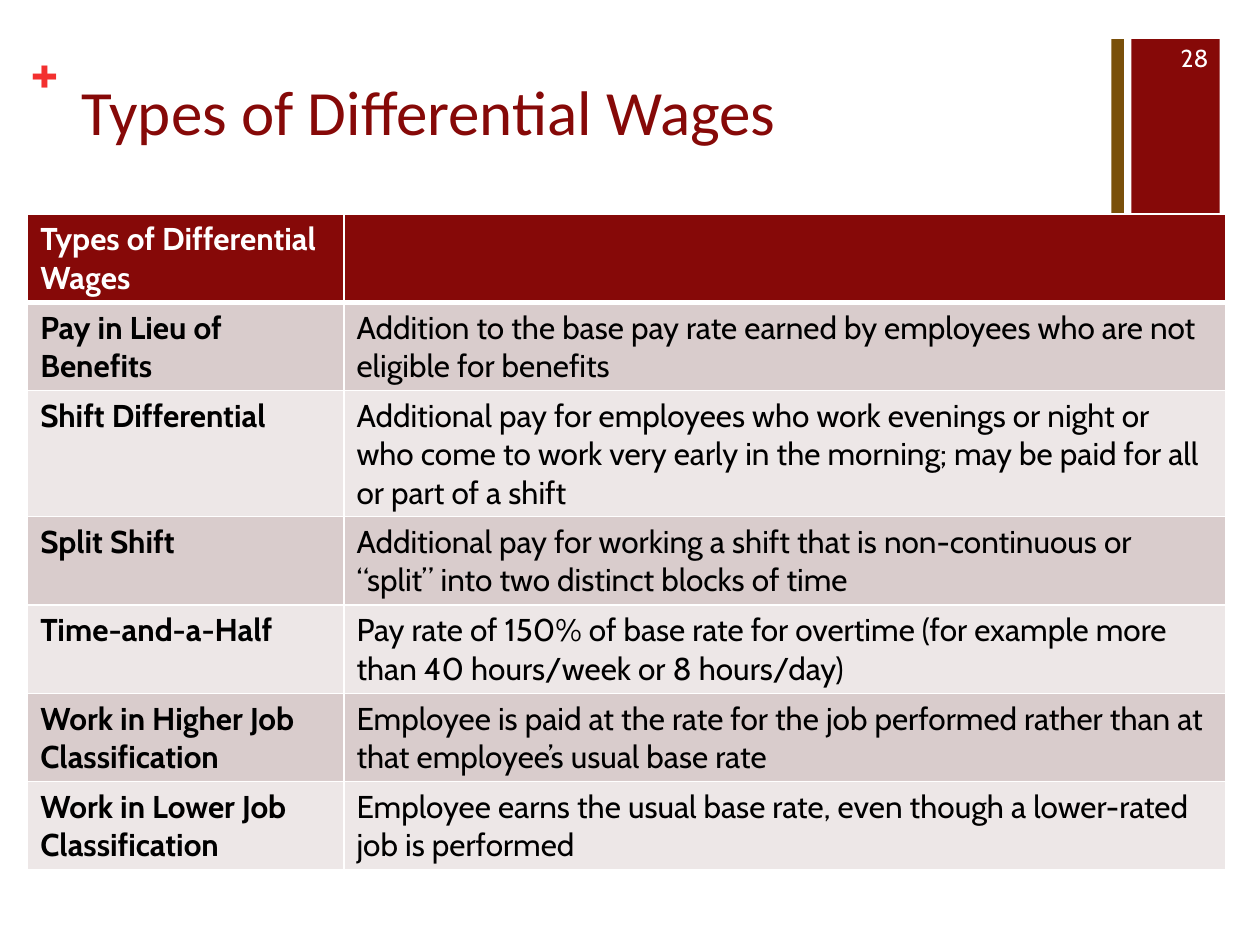
from dataclasses import dataclass

from lxml.etree import SubElement
from pptx import Presentation
from pptx.dml.color import RGBColor as Rgb
from pptx.enum.shapes import MSO_SHAPE as Shape
from pptx.enum.text import MSO_ANCHOR as Anchor, PP_ALIGN as Align
from pptx.oxml.ns import qn
from pptx.util import Inches, Pt


@dataclass(frozen=True)
class Theme:
    red: str = "860908"
    gold: str = "7A500A"
    plus: str = "F3302F"
    white: str = "FFFFFF"
    black: str = "000000"
    bands: tuple = ("D9CCCC", "EDE7E7")
    body: str = "Cabin"
    head: str = "Calibri"
    big: int = 36
    text: int = 18
    small: int = 14


@dataclass(frozen=True)
class Box:
    left: float
    top: float
    width: float
    height: float

    def emu(self) -> tuple:
        return tuple(map(Inches, (self.left, self.top, self.width, self.height)))


@dataclass(frozen=True)
class Label:
    box: Box
    text: str
    size: int
    font: str
    color: str
    bold: bool = False
    inset: bool = True
    align: Align = Align.LEFT
    anchor: Anchor = Anchor.TOP


@dataclass(frozen=True)
class Wage:
    name: str
    note: str
    height: float = 0.63


T = Theme()

BARS = [
    (Box(8.98, 0.31, 0.7, 1.75), T.red),
    (Box(8.82, 0.31, 0.1, 1.75), T.gold),
]
LABELS = [
    Label(Box(0.24, 0.25, 0.29, 0.61), "+", T.big, T.body, T.plus,
          bold=True, inset=False),
    Label(Box(0.55, 0.53, 8.26, 1.22), "Types of Differential Wages",
          T.big, T.head, T.red),
    Label(Box(9.08, 0.26, 0.61, 0.4), "28", T.small, T.body, T.white,
          align=Align.RIGHT, anchor=Anchor.MIDDLE),
]
COLS = (2.51, 7)
WAGES = [
    Wage("Types of Differential Wages", ""),
    Wage("Pay in Lieu of Benefits",
         "Addition to the base pay rate earned by employees who are not "
         "eligible for benefits"),
    Wage("Shift Differential",
         "Additional pay for employees who work evenings or night or who come "
         "to work very early in the morning; may be paid for all or part of a "
         "shift", 0.9),
    Wage("Split Shift",
         "Additional pay for working a shift that is non-continuous or "
         "“split” into two distinct blocks of time"),
    Wage("Time-and-a-Half",
         "Pay rate of 150% of base rate for overtime (for example more than "
         "40 hours/week or 8 hours/day)"),
    Wage("Work in Higher Job Classification",
         "Employee is paid at the rate for the job performed rather than at "
         "that employee’s usual base rate"),
    Wage("Work in Lower Job Classification",
         "Employee earns the usual base rate, even though a lower-rated job "
         "is performed"),
]


def add_run(para, text: str, size: int, font: str, color: str, bold: bool) -> None:
    run = para.add_run()
    run.text = text
    run.font.size = Pt(size)
    run.font.name = font
    run.font.bold = bold
    run.font.color.rgb = Rgb.from_string(color)


def draw_bar(slide, box: Box, color: str) -> None:
    bar = slide.shapes.add_shape(Shape.RECTANGLE, *box.emu())
    bar.shadow.inherit = False
    bar.fill.solid()
    bar.fill.fore_color.rgb = Rgb.from_string(color)
    bar.line.fill.background()


def draw_label(slide, label: Label) -> None:
    frame = slide.shapes.add_textbox(*label.box.emu()).text_frame
    frame.word_wrap = True
    frame.vertical_anchor = label.anchor
    if not label.inset:
        frame.margin_left = frame.margin_right = 0
        frame.margin_top = frame.margin_bottom = 0
    para = frame.paragraphs[0]
    para.alignment = label.align
    add_run(para, label.text, label.size, label.font, label.color, label.bold)


def set_edges(cell, base: float, top: float) -> None:
    """Border lines go ahead of the fill in the cell properties."""
    props = cell._tc.get_or_add_tcPr()
    for side, width in (("L", 1), ("R", 1), ("T", top), ("B", base)):
        line = SubElement(props, qn(f"a:ln{side}"), w=str(Pt(width)))
        fill = SubElement(line, qn("a:solidFill"))
        SubElement(fill, qn("a:srgbClr"), val=T.white)


def draw_table(slide, wages: list[Wage]) -> None:
    box = Box(0.22, 1.7, sum(COLS), sum(w.height for w in wages))
    table = slide.shapes.add_table(len(wages), len(COLS), *box.emu()).table
    for col, width in zip(table.columns, COLS):
        col.width = Inches(width)
    for i, wage in enumerate(wages):
        table.rows[i].height = Inches(wage.height)
        fill = T.bands[(i - 1) % 2] if i else T.red
        color = T.black if i else T.white
        for j, text in enumerate((wage.name, wage.note)):
            cell = table.cell(i, j)
            set_edges(cell, base=1 if i else 3, top=3 if i == 1 else 1)
            cell.fill.solid()
            cell.fill.fore_color.rgb = Rgb.from_string(fill)
            if text:
                add_run(cell.text_frame.paragraphs[0], text, T.text, T.body,
                        color, bold=j == 0)


def main() -> None:
    deck = Presentation()
    deck.slide_width, deck.slide_height = Inches(10), Inches(7.5)
    slide = deck.slides.add_slide(deck.slide_layouts[6])

    # Corner bars
    for box, color in BARS:
        draw_bar(slide, box, color)

    # Plus sign and title, then the table, then the page number
    *heads, page = LABELS
    for label in heads:
        draw_label(slide, label)
    draw_table(slide, WAGES)
    draw_label(slide, page)

    deck.save("out.pptx")


if __name__ == "__main__":
    main()
